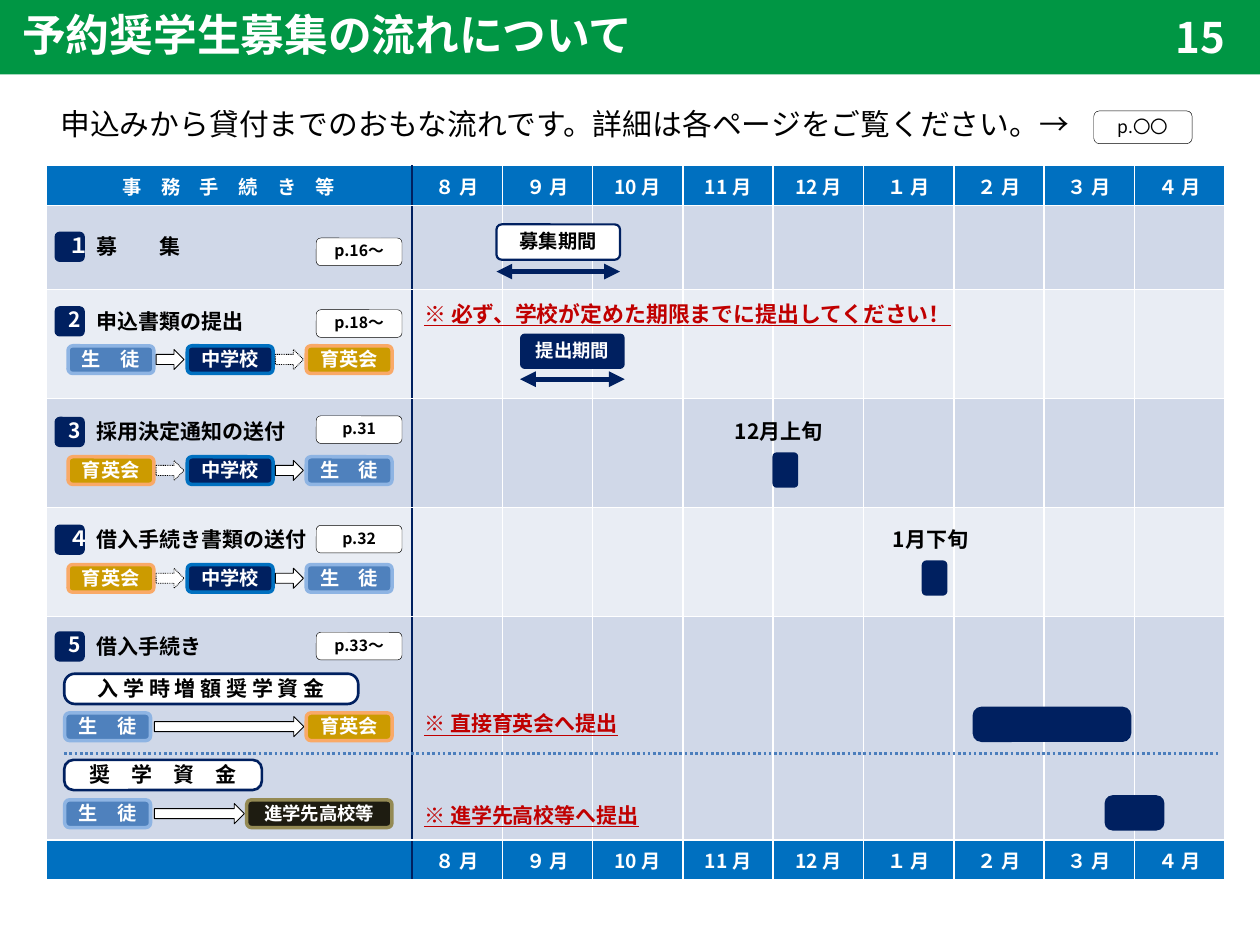
from dataclasses import dataclass

from lxml import etree
from pptx import Presentation
from pptx.dml.color import RGBColor
from pptx.enum.dml import MSO_LINE
from pptx.enum.shapes import MSO_CONNECTOR, MSO_SHAPE
from pptx.enum.text import MSO_ANCHOR, PP_ALIGN
from pptx.oxml.ns import qn
from pptx.util import Pt

RECTANGLE, ROUNDED = MSO_SHAPE.RECTANGLE, MSO_SHAPE.ROUNDED_RECTANGLE
RIGHT_ARROW, STRAIGHT = MSO_SHAPE.RIGHT_ARROW, MSO_CONNECTOR.STRAIGHT
LEFT, CENTER = PP_ALIGN.LEFT, PP_ALIGN.CENTER
TOP, MIDDLE = MSO_ANCHOR.TOP, MSO_ANCHOR.MIDDLE
DOTTED = MSO_LINE.ROUND_DOT

FONT = "Noto Sans CJK JP"
WHITE, BLACK, NAVY, BLUE = "FFFFFF", "000000", "002060", "0070C0"
GREEN, RED = "009644", "C00000"
BANDS = ("D0D8E8", "E9EDF4")
MONTHS = ("８ 月", "９ 月", "10 月", "11 月", "12 月", "１ 月", "２ 月", "３ 月", "４ 月")
ROW_HEIGHTS = (22.6, 48.3, 62.3, 62.3, 62.3, 127.7, 22.6)
TABLE_LEFT, TABLE_TOP, LABEL_WIDTH, MONTH_WIDTH = 26.2, 94.7, 209.3, 51.6
ACTOR_LEFTS = (38.9, 107, 175)
ACTOR_WIDTH, ACTOR_HEIGHT = 49, 15.8


@dataclass
class Place:
    left: float
    top: float
    width: float
    height: float

    def lengths(self) -> tuple:
        return Pt(self.left), Pt(self.top), Pt(self.width), Pt(self.height)


@dataclass
class TextStyle:
    size: float
    color: str = BLACK
    bold: bool = True
    underline: bool = False
    align: PP_ALIGN = CENTER
    anchor: MSO_ANCHOR = MIDDLE
    inset_top: float = 2.2
    inset_bottom: float = 3.6
    space_before: float = 0


@dataclass
class Outline:
    color: str
    width: float
    dash: MSO_LINE | None = None


@dataclass
class Actor:
    name: str
    fill: str
    edge: str
    size: float = 11


@dataclass
class Step:
    number: str
    title: str
    pages: str
    top: float
    pages_top: float


STUDENT = Actor("生　徒", "4F81BD", "8EB4E3")
SCHOOL = Actor("中学校", NAVY, BLUE)
FOUNDATION = Actor("育英会", "CC9B00", "F9A967")
HIGH_SCHOOL = Actor("進学先高校等", "1E1C11", "948A54", 10.5)
STEPS = (
    Step("１", "募　　集", "p.16～", 132.4, 136),
    Step("2", "申込書類の提出", "p.18～", 175, 177),
    Step("3", "採用決定通知の送付", "p.31", 238.2, 237.6),
    Step("４", "借入手続き書類の送付", "p.32", 299.8, 300.2),
    Step("5", "借入手続き", "p.33～", 360.8, 361.3),
)
# Top of the flow, its actors, and which of the two arrows is dotted
FLOWS = (
    (197.6, (STUDENT, SCHOOL, FOUNDATION), 1),
    (261, (FOUNDATION, SCHOOL, STUDENT), 0),
    (322.6, (FOUNDATION, SCHOOL, STUDENT), 0),
)
THIN_EDGE = Outline(BLACK, 0.25)
NAVY_EDGE = Outline(NAVY, 1.5)
NOTE = TextStyle(12, RED, underline=True, align=LEFT, inset_top=5.8)
HEADING = TextStyle(12, align=LEFT, inset_top=5.8)
DATE = TextStyle(12, inset_top=5.8)


def rgb(color: str) -> RGBColor:
    return RGBColor.from_string(color)


def write(frame, text: str, style: TextStyle) -> None:
    paragraph = frame.paragraphs[0]
    if text:
        paragraph.add_run().text = text
    paragraph.alignment = style.align
    if style.space_before:
        paragraph.space_before = Pt(style.space_before)
    font = paragraph.font
    font.name, font.size, font.bold = FONT, Pt(style.size), style.bold
    font.underline = style.underline
    font.color.rgb = rgb(style.color)
    properties = paragraph._p.pPr.find(qn("a:defRPr"))
    latin = properties.find(qn("a:latin"))
    latin.addnext(etree.Element(qn("a:ea"), typeface=FONT))


def fill_frame(box, text: str, style: TextStyle) -> None:
    frame = box.text_frame
    frame.word_wrap = True
    frame.vertical_anchor = style.anchor
    frame.margin_top, frame.margin_bottom = Pt(style.inset_top), Pt(style.inset_bottom)
    write(frame, text, style)


def add_text(page, place: Place, text: str, style: TextStyle) -> None:
    fill_frame(page.shapes.add_textbox(*place.lengths()), text, style)


def add_box(page, kind: MSO_SHAPE, place: Place, fill: str, outline: Outline | None = None,
            text: str = "", style: TextStyle | None = None, rounding: float | None = None) -> None:
    box = page.shapes.add_shape(kind, *place.lengths())
    box.shadow.inherit = False
    box.fill.solid()
    box.fill.fore_color.rgb = rgb(fill)
    if outline:
        draw_line(box.line, outline)
    else:
        box.line.fill.background()
    if rounding is not None:
        box.adjustments[0] = rounding
    if style:
        fill_frame(box, text, style)


def draw_line(line, outline: Outline) -> None:
    line.color.rgb = rgb(outline.color)
    line.width = Pt(outline.width)
    if outline.dash:
        line.dash_style = outline.dash


def add_line(page, left: float, right: float, top: float, outline: Outline, arrows: bool = False) -> None:
    connector = page.shapes.add_connector(STRAIGHT, Pt(left), Pt(top), Pt(right), Pt(top))
    draw_line(connector.line, outline)
    properties = connector._element.spPr
    if arrows:
        for end in ("a:headEnd", "a:tailEnd"):
            etree.SubElement(properties.find(qn("a:ln")), qn(end), type="triangle")
    etree.SubElement(properties, qn("a:effectLst"))


def add_actor(page, actor: Actor, left: float, top: float, width: float = ACTOR_WIDTH) -> None:
    add_box(page, ROUNDED, Place(left, top, width, ACTOR_HEIGHT), actor.fill, Outline(actor.edge, 2),
            actor.name, TextStyle(actor.size, WHITE, inset_top=2.9))


def add_arrow(page, left: float, top: float, width: float, dash: MSO_LINE | None = None) -> None:
    add_box(page, RIGHT_ARROW, Place(left, top + 2.1, width, 11.5), WHITE, Outline(BLACK, 0.5, dash))


def add_pages(page, place: Place, text: str, style: TextStyle) -> None:
    add_box(page, ROUNDED, place, WHITE, THIN_EDGE, text, style)


def style_cell(cell, fill: str, edges: dict[str, str]) -> None:
    cell.vertical_anchor = MIDDLE
    cell.margin_top = cell.margin_bottom = 0
    properties = cell._tc.get_or_add_tcPr()
    for side, color in edges.items():
        edge = etree.SubElement(properties, qn(f"a:ln{side}"), w=str(Pt(1)))
        solid = etree.SubElement(edge, qn("a:solidFill"))
        etree.SubElement(solid, qn("a:srgbClr"), val=color)
    cell.fill.solid()
    cell.fill.fore_color.rgb = rgb(fill)


def add_schedule(page) -> None:
    widths = [LABEL_WIDTH] + [MONTH_WIDTH] * len(MONTHS)
    place = Place(TABLE_LEFT, TABLE_TOP, sum(widths), sum(ROW_HEIGHTS))
    table = page.shapes.add_table(len(ROW_HEIGHTS), len(widths), *place.lengths()).table
    for column, width in zip(table.columns, widths):
        column.width = Pt(width)
    last = len(ROW_HEIGHTS) - 1
    labels = {0: ("事　務　手　続　き　等", *MONTHS), last: ("", *MONTHS)}
    for row, height in enumerate(ROW_HEIGHTS):
        table.rows[row].height = Pt(height)
        fill = BLUE if row in labels else BANDS[(row - 1) % 2]
        for column, text in enumerate(labels.get(row, [""] * len(widths))):
            cell = table.cell(row, column)
            edges = {"L": NAVY if column == 1 else WHITE, "R": NAVY if column == 0 else WHITE,
                     "T": WHITE, "B": WHITE}
            style_cell(cell, fill, edges)
            write(cell.text_frame, text, TextStyle(11, WHITE))


def add_steps(page) -> None:
    for step in STEPS:
        add_box(page, ROUNDED, Place(31.2, step.top, 17.3, 17.3), NAVY, None,
                step.number, TextStyle(12, WHITE, inset_top=1.4))
        add_text(page, Place(48.2, step.top - 1.8, 142, 18), step.title, HEADING)
        add_pages(page, Place(180.7, step.pages_top, 49, 15.8), step.pages, TextStyle(9))
    for top, actors, dotted in FLOWS:
        for left, actor in zip(ACTOR_LEFTS, actors):
            add_actor(page, actor, left, top)
        for index, left in enumerate((89.2, 157.4)):
            add_arrow(page, left, top, 16, DOTTED if index == dotted else None)


def add_loans(page) -> None:
    title = TextStyle(12)
    for place, name, rounding in ((Place(36.7, 385, 168, 17.3), "入 学 時 増 額 奨 学 資 金", 0.35),
                                  (Place(36.7, 434.2, 113, 17.3), "奨　学　資　金", 0.31)):
        add_box(page, ROUNDED, place, WHITE, NAVY_EDGE, name, title, rounding)
    for top, target, left, width in ((407.4, FOUNDATION, 175, ACTOR_WIDTH), (457.1, HIGH_SCHOOL, 141, 83)):
        add_actor(page, STUDENT, 37, top)
        add_arrow(page, 88.2, top, left - 89.6, None)
        add_actor(page, target, left, top, width)
    add_line(page, 36.7, 697, 430.5, Outline("4B7EBC", 1.5, DOTTED))


def add_timeline(page) -> None:
    add_text(page, Place(235.4, 160, 327.6, 36), "※ 必ず、学校が定めた期限までに提出してください！",
             TextStyle(12.5, RED, underline=True, align=LEFT, inset_top=5.8))
    add_text(page, Place(235.4, 400.3, 168, 24), "※ 直接育英会へ提出", NOTE)
    add_text(page, Place(235.4, 450.7, 168, 28), "※ 進学先高校等へ提出", NOTE)
    add_text(page, Place(405.4, 230.4, 79.2, 29.5), "12月上旬", DATE)
    add_text(page, Place(490.3, 293, 82.8, 28), "1月下旬", DATE)
    add_box(page, ROUNDED, Place(283.7, 128.2, 70.6, 20.2), WHITE, Outline(NAVY, 1.25),
            "募集期間", TextStyle(11), 0.15)
    add_box(page, ROUNDED, Place(297.2, 190.6, 59.8, 20.2), NAVY, None,
            "提出期間", TextStyle(10.5, WHITE), 0.13)
    for left, right, top in ((283.7, 354.3, 155.2), (297.2, 357, 216.7)):
        add_line(page, left, right, top, Outline(NAVY, 3), arrows=True)
    for left, top, width, rounding in ((441.4, 258.5, 14.7, 0.16), (526.7, 320.2, 14.7, 0.18),
                                       (555.8, 403.8, 90.7, 0.25), (631.2, 454.4, 34.2, 0.23)):
        add_box(page, ROUNDED, Place(left, top, width, 20.2), NAVY, rounding=rounding)


def main() -> None:
    deck = Presentation()
    deck.slide_width, deck.slide_height = Pt(720), Pt(540)
    page = deck.slides.add_slide(deck.slide_layouts[6])
    add_box(page, RECTANGLE, Place(0, 0, 720, 42.5), GREEN, None, " 予約奨学生募集の流れについて",
            TextStyle(25, WHITE, align=LEFT, inset_top=0))
    add_box(page, RECTANGLE, Place(654.5, 2.9, 62.6, 36), GREEN, None, "15",
            TextStyle(24, WHITE, inset_top=3.6))
    add_schedule(page)
    add_text(page, Place(27.4, 56.9, 661.7, 42.5),
             "申込みから貸付までのおもな流れです。詳細は各ページをご覧ください。→",
             TextStyle(17, bold=False, align=LEFT, anchor=TOP, inset_top=3.6, space_before=3.4))
    add_pages(page, Place(625, 63.4, 56.2, 18.7), "p.〇〇", TextStyle(10, bold=False))
    add_steps(page)
    add_loans(page)
    add_timeline(page)
    deck.save("out.pptx")


if __name__ == "__main__":
    main()
